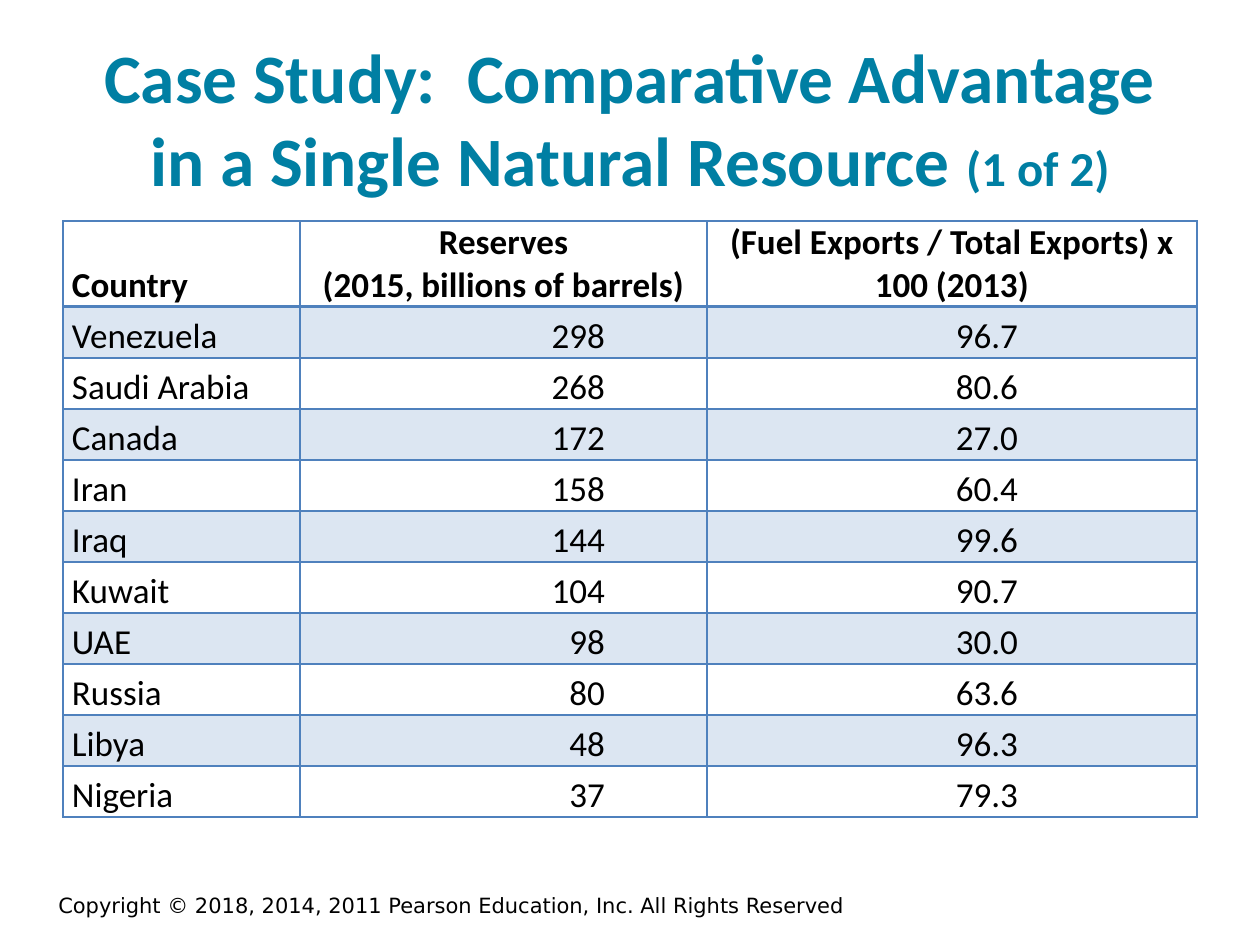
"""Build a slide with a table of oil reserves and fuel export shares by country."""
from pptx import Presentation
from pptx import util as u
from pptx.dml.color import RGBColor
from pptx.enum import text
from pptx.oxml import parse_xml
from pptx.oxml.ns import nsdecls

TITLE = [("Case Study:  Comparative Advantage in a Single Natural Resource ", 39.6),
         ("(1 of 2)", 27.9)]
HEADER = ("Country", "Reserves\n(2015, billions of barrels)",
          "(Fuel Exports / Total Exports) x 100 (2013)")
COUNTRIES = [
    ("Venezuela", "298", "96.7"),
    ("Saudi Arabia", "268", "80.6"),
    ("Canada", "172", "27.0"),
    ("Iran", "158", "60.4"),
    ("Iraq", "144", "99.6"),
    ("Kuwait", "104", "90.7"),
    ("UAE", "98", "30.0"),
    ("Russia", "80", "63.6"),
    ("Libya", "48", "96.3"),
    ("Nigeria", "37", "79.3"),
]
COPYRIGHT = "Copyright © 2018, 2014, 2011 Pearson Education, Inc. All Rights Reserved"

COLORS = {"title": "007FA3", "text": "000000", "line": "4F81BD",
          "band": "DCE6F2", "plain": "FFFFFF"}
PX = 914400 // 126
COL_WIDTHS = (237, 407, 490)
HEADER_HEIGHT, ROW_HEIGHT = 86, 51
CELL_INSET = 9
NUMBER_INSETS = (CELL_INSET, 102, 179)
ALIGN = text.PP_ALIGN


def px(n):
    return u.Emu(n * PX)


def box(left, top, width, height):
    return [px(n) for n in (left, top, width, height)]


def style(font, size, color, bold=False, name="Calibri"):
    font.name, font.size, font.bold = name, u.Pt(size), bold
    font.color.rgb = RGBColor.from_string(COLORS[color])


def add_borders(cell, top, bottom):
    tc_pr = cell._tc.get_or_add_tcPr()
    for side, width in (("L", 1), ("R", 1), ("T", top), ("B", bottom)):
        tc_pr.append(parse_xml(
            f'<a:ln{side} {nsdecls("a")} w="{u.Pt(width)}"><a:solidFill>'
            f'<a:srgbClr val="{COLORS["line"]}"/></a:solidFill></a:ln{side}>'))


def fill_cell(cell, value, row, col):
    is_header = row == 0
    cell.text = value
    cell.vertical_anchor = text.MSO_ANCHOR.BOTTOM
    cell.margin_top = cell.margin_bottom = 0
    cell.margin_left = px(CELL_INSET)
    cell.margin_right = px(CELL_INSET if is_header else NUMBER_INSETS[col])
    for p in cell.text_frame.paragraphs:
        if col:
            p.alignment = ALIGN.CENTER if is_header else ALIGN.RIGHT
        else:
            p.alignment = ALIGN.LEFT
        for r in p.runs:
            style(r.font, 20, "text", bold=is_header)
    add_borders(cell, 2 if row == 1 else 1, 2 if is_header else 1)
    cell.fill.solid()
    cell.fill.fore_color.rgb = RGBColor.from_string(COLORS["band" if row % 2 else "plain"])


def add_title(s):
    sp = s.shapes.title
    sp.left, sp.top, sp.width, sp.height = box(63, 38, 1134, 158)
    tf = sp.text_frame
    tf.word_wrap, tf.auto_size = True, text.MSO_AUTO_SIZE.NONE
    tf.vertical_anchor = text.MSO_ANCHOR.MIDDLE
    p = tf.paragraphs[0]
    p.alignment = ALIGN.CENTER
    for words, size in TITLE:
        r = p.add_run()
        r.text = words
        style(r.font, size, "title", bold=True)


def add_country_table(s):
    rows = [HEADER, *COUNTRIES]
    heights = [HEADER_HEIGHT] + [ROW_HEIGHT] * len(COUNTRIES)
    table = s.shapes.add_table(len(rows), len(COL_WIDTHS),
                               *box(63, 221, sum(COL_WIDTHS), sum(heights))).table
    table.first_row = table.horz_banding = False
    for column, width in zip(table.columns, COL_WIDTHS):
        column.width = px(width)
    for i, (values, height) in enumerate(zip(rows, heights)):
        table.rows[i].height = px(height)
        for j, value in enumerate(values):
            fill_cell(table.cell(i, j), value, i, j)


def add_copyright(s):
    tf = s.shapes.add_textbox(*box(-26, 883, 955, 45)).text_frame
    tf.word_wrap = True
    tf.vertical_anchor = text.MSO_ANCHOR.MIDDLE
    p = tf.paragraphs[0]
    p.text = COPYRIGHT
    p.alignment = ALIGN.CENTER
    style(p.runs[0].font, 12, "text", name="DejaVu Sans")


def main():
    prs = Presentation()
    prs.slide_width, prs.slide_height = px(1260), px(945)
    s = prs.slides.add_slide(prs.slide_layouts[5])
    add_copyright(s)
    add_title(s)
    add_country_table(s)
    prs.save("out.pptx")


if __name__ == "__main__":
    main()
